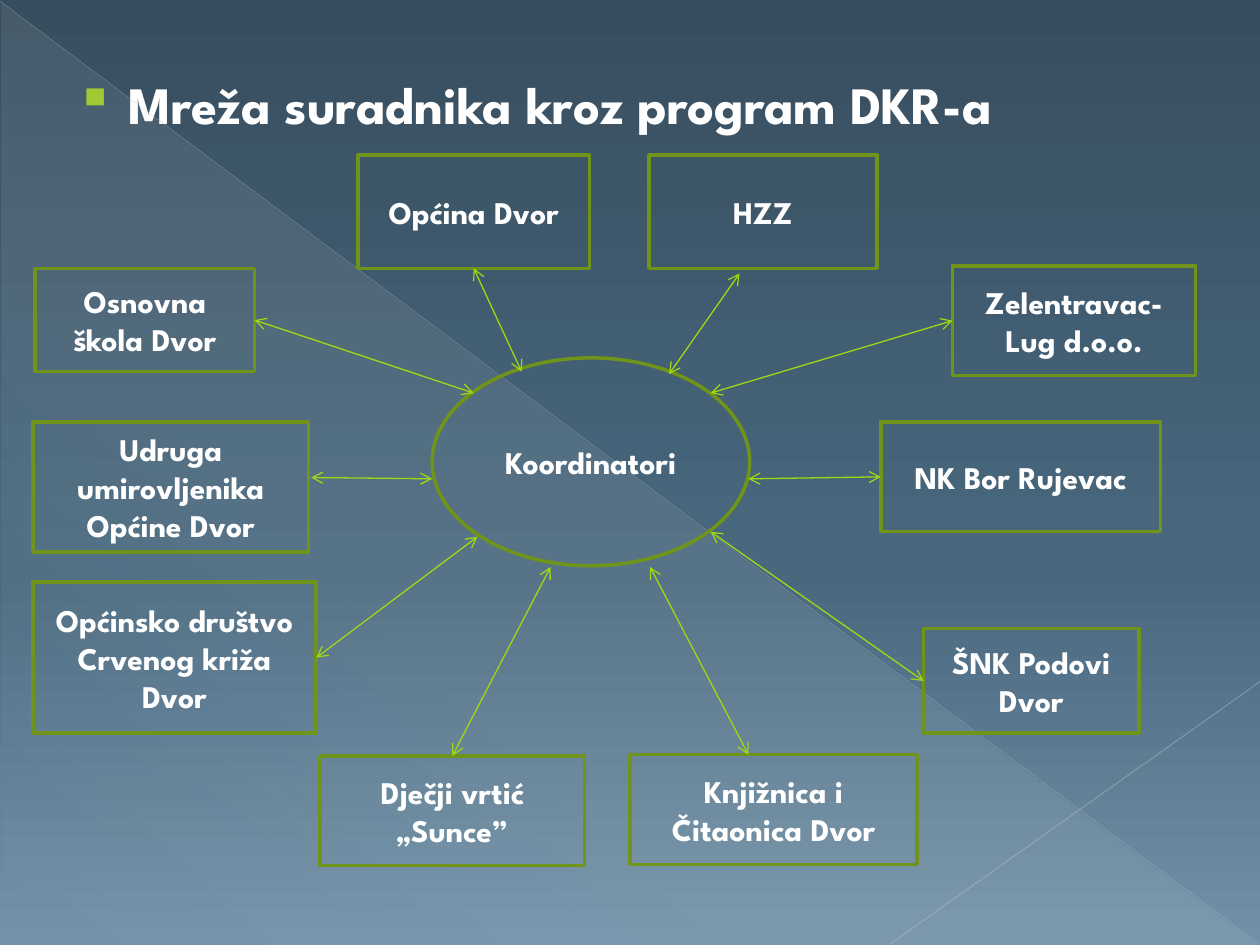
from lxml import etree
from pptx import Presentation, util as u
from pptx.dml.color import RGBColor
from pptx.enum import shapes, text
from pptx.oxml.ns import qn

COLORS = {
    "text": "FFFFFF", "bullet": "98C723", "outline": "70931A", "arrow": "9FD713",
    "sky_top": "374E5F", "sky_mid": "49687E", "sky_low": "7291A8",
    "haze": "E7ECED", "diagonal": "BAC0C6", "corner": "C2C7CC",
}
FONT = "League Spartan"
CELL = u.Inches(0.1)  # the slide is a grid of 100 columns by 75 rows


def apply_gradient(properties, stops, angle):
    """Fill with (position %, color name, opacity %) stops, angle clockwise."""
    gradient = properties.find(qn("a:gradFill"))
    for child in list(gradient):
        gradient.remove(child)
    stop_list = etree.SubElement(gradient, qn("a:gsLst"))
    for position, color, opacity in stops:
        stop = etree.SubElement(stop_list, qn("a:gs"), pos=str(position * 1000))
        tint = etree.SubElement(stop, qn("a:srgbClr"), val=COLORS[color])
        etree.SubElement(tint, qn("a:alpha"), val=str(opacity * 1000))
    etree.SubElement(gradient, qn("a:lin"), ang=str(angle * 60000), scaled="0")


def draw_line(start, end, color, width, opacity=100):
    ends = [round(value * CELL) for value in (*start, *end)]
    line = slide.shapes.add_connector(shapes.MSO_CONNECTOR.STRAIGHT, *ends)
    line.line.color.rgb = RGBColor.from_string(COLORS[color])
    line.line.width = u.Pt(width)
    tint = line.line._ln.find(".//" + qn("a:srgbClr"))
    etree.SubElement(tint, qn("a:alpha"), val=str(opacity * 1000))
    etree.SubElement(line._element.spPr, qn("a:effectLst"))
    return line


deck = Presentation()
deck.slide_width, deck.slide_height = 100 * CELL, 75 * CELL
slide = deck.slides.add_slide(deck.slide_layouts[5])

# Background: sky gradient, hazy triangle and two thin diagonals
slide.background.fill.gradient()
apply_gradient(slide._element.find(".//" + qn("p:bgPr")),
               [(0, "sky_top", 100), (60, "sky_mid", 100), (100, "sky_low", 100)], 90)
haze = slide.shapes.add_shape(shapes.MSO_SHAPE.RIGHT_TRIANGLE,
                              *[round(n * CELL) for n in (0.1, 0.2, 99.8, 74.8)])
haze.shadow.inherit = False
haze.line.fill.background()
haze.fill.gradient()
apply_gradient(haze._element.spPr, [(0, "haze", 10), (70, "haze", 8), (100, "haze", 1)], 133)
draw_line((0, 0.1), (99.9, 74.9), "diagonal", 0.39, 35)
draw_line((100, 54.1), (70.7, 74.9), "corner", 0.47, 45)

# Heading with a square bullet
heading = slide.shapes.title
heading.left, heading.top, heading.width, heading.height = [
    round(n * CELL) for n in (4.3, 5.2, 92.9, 6.5)]
frame = heading.text_frame
frame.text = "Mreža suradnika kroz program DKR-a"
frame.auto_size = text.MSO_AUTO_SIZE.NONE
frame.vertical_anchor = text.MSO_ANCHOR.TOP
line = frame.paragraphs[0]
line.alignment = text.PP_ALIGN.LEFT
line.space_before = u.Pt(6)
line.font.size, line.font.bold, line.font.name = u.Pt(30), True, FONT
line.font.color.rgb = RGBColor.from_string(COLORS["text"])
bullet = line._p.get_or_add_pPr()
bullet.set("marL", str(u.Inches(0.49)))
bullet.set("indent", str(u.Inches(-0.42)))
bullet_color = etree.Element(qn("a:buClr"))
etree.SubElement(bullet_color, qn("a:srgbClr"), val=COLORS["bullet"])
bullet_char = etree.Element(qn("a:buChar"), char="▪")
bullet.find(qn("a:spcBef")).addnext(bullet_color)
bullet_color.addnext(bullet_char)

# Hub first, then partners: label, box, arrow start at the hub,
# arrow end at the partner (a side number joins the middle of that side)
TOP, LEFT, BOTTOM, RIGHT = range(4)
network = [
    ("Koordinatori", (34.3, 28.4, 25.2, 16.5), None, None),
    ("Udruga umirovljenika Općine Dvor", (2.6, 33.5, 21.9, 10.3), (34.3, 38), (24.7, 37.9)),
    ("NK Bor Rujevac", (69.9, 33.5, 22.2, 8.7), (59.4, 38), LEFT),
    ("Općinsko društvo Crvenog križa Dvor", (2.6, 46.2, 22.5, 12), (37.9, 42.6), RIGHT),
    ("ŠNK Podovi Dvor", (73.3, 49.9, 17.1, 8.3), (56.4, 42.2), LEFT),
    ("Dječji vrtić „Sunce”", (25.4, 60, 21, 8.7), (43.7, 45), TOP),
    ("Knjižnica i Čitaonica Dvor", (50, 59.9, 22.8, 8.7), (51.6, 45), (59.4, 59.9)),
    ("Osnovna škola Dvor", (2.8, 21.3, 17.4, 8.2), (37.6, 31.2), RIGHT),
    ("Zelentravac- Lug d.o.o.", (75.6, 21.1, 19.3, 8.7), (56.4, 31.2), LEFT),
    ("Općina Dvor", (28.4, 12.3, 18.4, 9), (41.4, 29.5), BOTTOM),
    ("HZZ", (51.5, 12.3, 18.1, 9), (53.1, 29.7), (58.7, 21.7)),
]
for label, box, start, end in network:
    outline = shapes.MSO_SHAPE.RECTANGLE if start else shapes.MSO_SHAPE.OVAL
    member = slide.shapes.add_shape(outline, *[round(n * CELL) for n in box])
    member.shadow.inherit = False
    member.fill.background()
    member.line.color.rgb = RGBColor.from_string(COLORS["outline"])
    member.line.width = u.Pt(2)
    frame = member.text_frame
    frame.text = label
    frame.word_wrap = True
    frame.vertical_anchor = text.MSO_ANCHOR.MIDDLE
    line = frame.paragraphs[0]
    line.alignment = text.PP_ALIGN.CENTER
    line.font.size, line.font.bold, line.font.name = u.Pt(18), True, FONT
    line.font.color.rgb = RGBColor.from_string(COLORS["text"])
    if start:
        joined = isinstance(end, int)
        arrow = draw_line(start, start if joined else end, "arrow", 0.75)
        if joined:
            arrow.end_connect(member, end)
        for tip in ("a:headEnd", "a:tailEnd"):
            etree.SubElement(arrow.line._ln, qn(tip), type="arrow")

deck.save("out.pptx")
